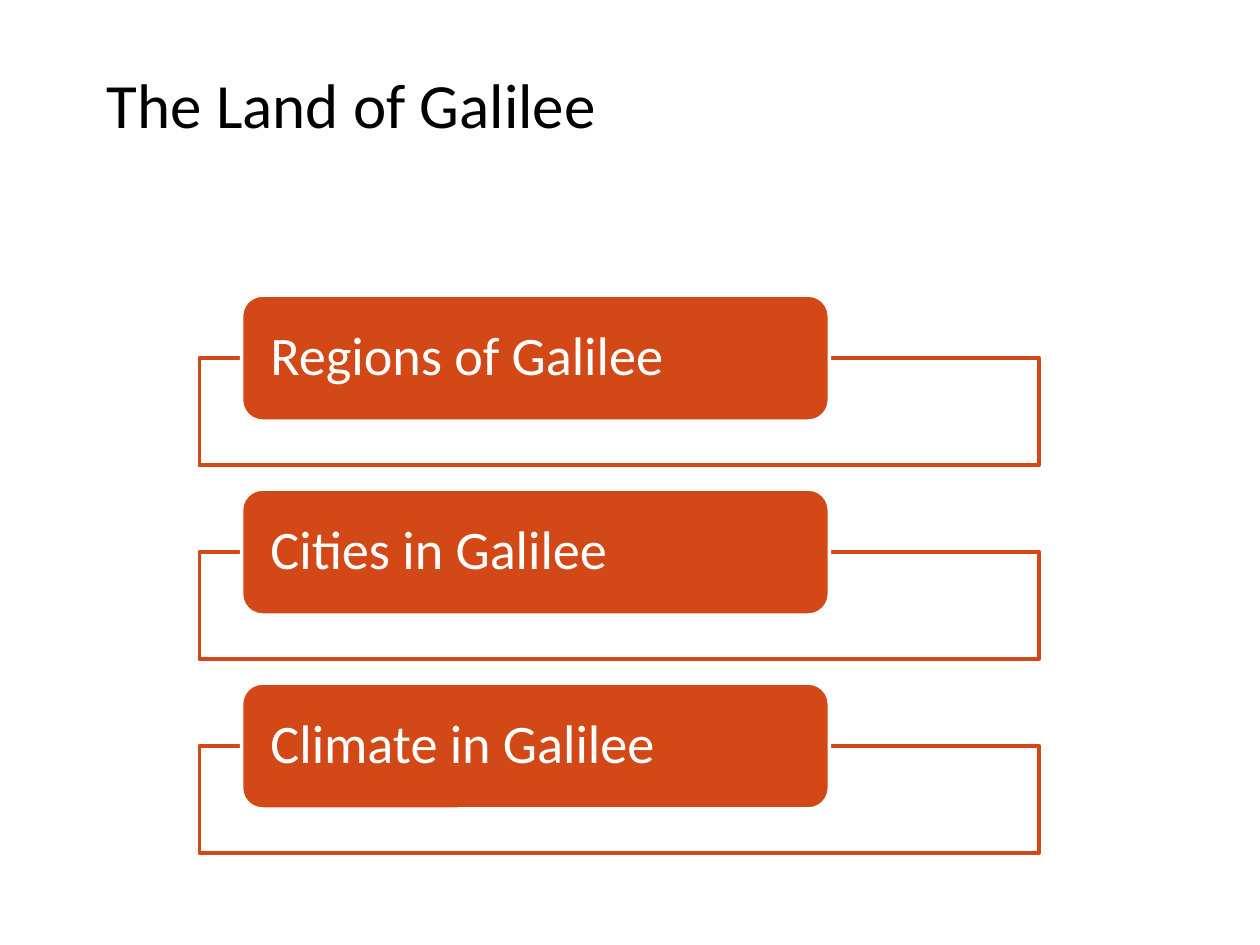
import pptx
import pptx.dml.color
import pptx.enum.shapes
import pptx.enum.text
import pptx.oxml.ns
import pptx.util
from lxml import etree

Cm = pptx.util.Cm
Pt = pptx.util.Pt
Shape = pptx.enum.shapes.MSO_SHAPE
Anchor = pptx.enum.text.MSO_ANCHOR
Align = pptx.enum.text.PP_ALIGN

ORANGE = pptx.dml.color.RGBColor(0xD3, 0x48, 0x17)
WHITE = pptx.dml.color.RGBColor(0xFF, 0xFF, 0xFF)
BLACK = pptx.dml.color.RGBColor(0x00, 0x00, 0x00)

TOPICS = ["Regions of Galilee", "Cities in Galilee", "Climate in Galilee"]
FIRST_TOP = 5.95
PITCH = 3.91
FRAME_DROP = 1.27


def apply_format(target, values):
    for name, value in values.items():
        setattr(target, name, value)


class TopicSlide:
    font_name = "Calibri"
    line_width = Pt(2)

    def __init__(self, presentation):
        self.slide = presentation.slides.add_slide(presentation.slide_layouts[5])

    def add_text(self, shape, text, size, color, frame_format, paragraph_format):
        frame = shape.text_frame
        apply_format(frame, {"word_wrap": True, **frame_format})
        paragraph = frame.paragraphs[0]
        apply_format(paragraph, {"alignment": Align.LEFT, **paragraph_format})
        run = paragraph.add_run()
        run.text = text
        apply_format(run.font, {"name": self.font_name, "size": Pt(size)})
        run.font.color.rgb = color

    def add_title(self, text, left, top, width, height):
        title = self.slide.shapes.title
        apply_format(title, {"left": Cm(left), "top": Cm(top),
                             "width": Cm(width), "height": Cm(height)})
        self.add_text(title, text, 36, BLACK, {"vertical_anchor": Anchor.BOTTOM}, {})

    def add_block(self, kind, left, top, width, height, fill, line):
        shape = self.slide.shapes.add_shape(
            kind, Cm(left), Cm(top), Cm(width), Cm(height))
        shape.shadow.inherit = False
        shape.fill.solid()
        shape.fill.fore_color.rgb = fill
        shape.line.color.rgb = line
        shape.line.width = self.line_width
        return shape

    def add_frame(self, top):
        frame = self.add_block(Shape.RECTANGLE, 4.02, top, 16.93, 2.16, WHITE, ORANGE)
        color = frame.element.find(
            "/".join(pptx.oxml.ns.qn(tag) for tag in ("p:spPr", "a:solidFill", "a:srgbClr")))
        etree.SubElement(color, pptx.oxml.ns.qn("a:alpha"), val="90000")

    def add_label(self, text, top):
        label = self.add_block(
            Shape.ROUNDED_RECTANGLE, 4.87, top, 11.85, 2.54, ORANGE, WHITE)
        self.add_text(label, text, 31, WHITE,
                      {"vertical_anchor": Anchor.MIDDLE,
                       "margin_left": Cm(0.46), "margin_right": Cm(0.46),
                       "margin_top": 0, "margin_bottom": 0},
                      {"line_spacing": 0.9})


def main():
    presentation = pptx.Presentation()
    apply_format(presentation, {"slide_width": Cm(25.4), "slide_height": Cm(19.05)})
    topic_slide = TopicSlide(presentation)
    topic_slide.add_title("The Land of Galilee", 1.9, 1.07, 22.23, 1.9)
    for index, topic in enumerate(TOPICS):
        top = FIRST_TOP + index * PITCH
        topic_slide.add_frame(top + FRAME_DROP)
        topic_slide.add_label(topic, top)
    presentation.save("out.pptx")


if __name__ == "__main__":
    main()
